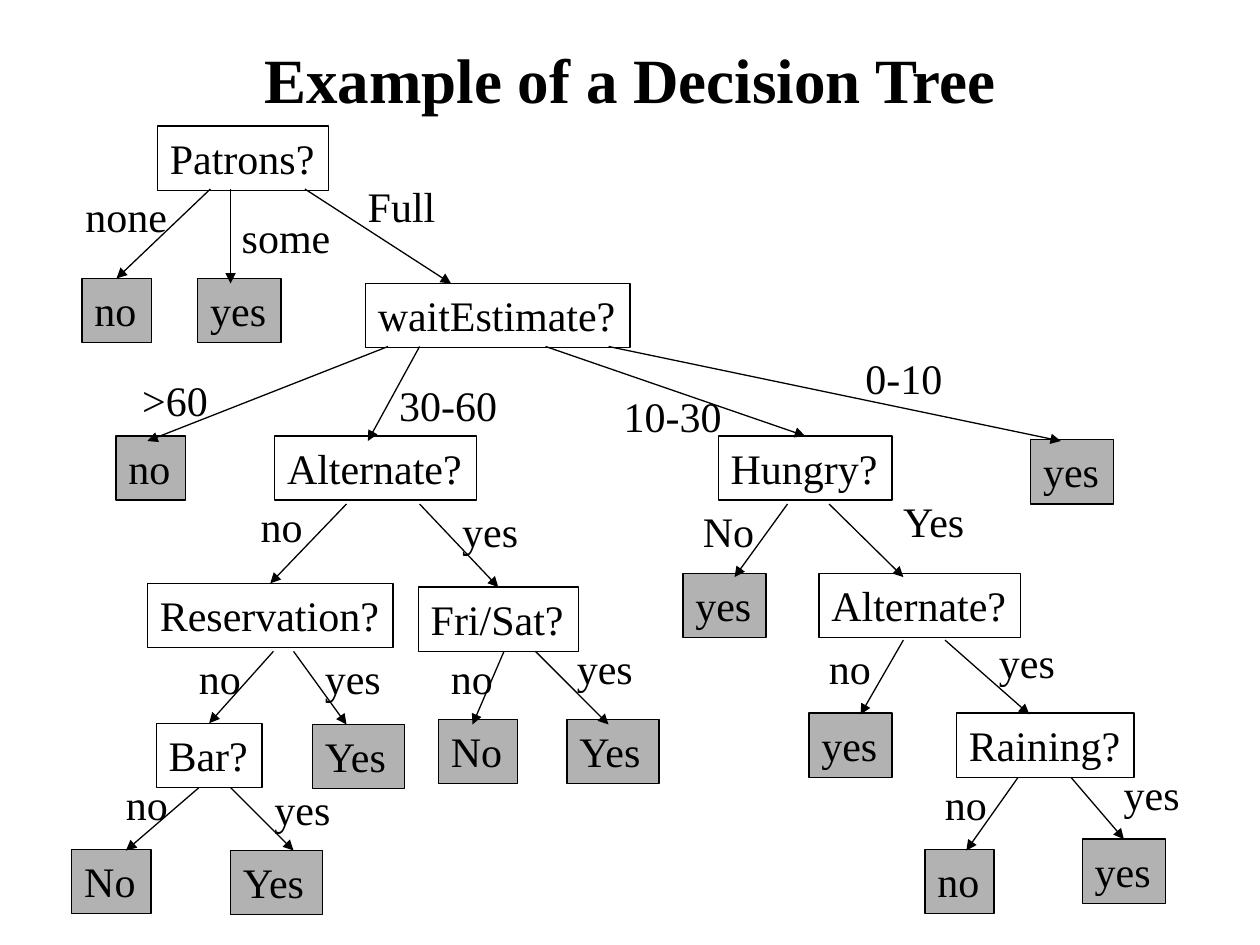
from lxml import etree
from pptx import Presentation
from pptx.dml.color import RGBColor
from pptx.enum.shapes import MSO_CONNECTOR, MSO_SHAPE
from pptx.enum.text import MSO_ANCHOR, MSO_AUTO_SIZE, PP_ALIGN
from pptx.oxml.ns import qn
from pptx.util import Cm, Pt

RECT = MSO_SHAPE.RECTANGLE
LINE = MSO_CONNECTOR.STRAIGHT
LEFT, MID = PP_ALIGN.LEFT, PP_ALIGN.CENTER
TOP, CENTER = MSO_ANCHOR.TOP, MSO_ANCHOR.MIDDLE
GROW = MSO_AUTO_SIZE.SHAPE_TO_FIT_TEXT

BLACK, GRAY = "000000", "B2B2B2"
FONT = {"name": "Times New Roman", "size": Pt(24), "bold": False}
HEAD = {**FONT, "size": Pt(36), "bold": True}
FRAME = {"word_wrap": False, "auto_size": GROW, "vertical_anchor": TOP}
BANNER = {"word_wrap": True, "vertical_anchor": CENTER}

# Width of each text with its margins, in inches
WIDTH = {
    "no": 0.54, "No": 0.62, "yes": 0.65, "Yes": 0.72, "none": 0.86,
    "some": 0.92, "Full": 0.74, ">60": 0.72, "0-10": 0.82,
    "30-60": 0.99, "10-30": 0.99, "Patrons?": 1.35,
    "waitEstimate?": 2.09, "Alternate?": 1.59, "Hungry?": 1.37,
    "Reservation?": 1.94, "Fri/Sat?": 1.26, "Bar?": 0.83,
    "Raining?": 1.4,
}

# Branches: child, its corner, arrow start, arrow end, label, its corner.
# An arrow without an end joins the middle of the child's top side.
TREE = [
    # Patrons?
    ("no", (0.65, 2.21), (1.67, 1.5), None, "none", (0.58, 1.46)),
    ("yes", (1.57, 2.21), (1.83, 1.5), (1.83, 2.25), "some", (1.82, 1.63)),
    ("waitEstimate?", (2.9, 2.25), (2.42, 1.5), (3.58, 2.25), "Full", (2.82, 1.38)),
    # waitEstimate?
    ("no", (0.92, 3.46), (3.08, 2.75), (1.17, 3.5), ">60", (1.03, 2.92)),
    ("Alternate?", (2.18, 3.46), (3.33, 2.75), (2.92, 3.5), "30-60", (3.07, 2.96)),
    ("Hungry?", (5.7, 3.46), (4.33, 2.75), None, "10-30", (4.85, 3.05)),
    ("yes", (8.18, 3.49), (4.83, 2.75), (8.42, 3.5), "0-10", (6.77, 2.75)),
    # Alternate? on the left
    ("Reservation?", (1.17, 4.63), (2.75, 4), None, "no", (1.97, 3.92)),
    ("Fri/Sat?", (3.32, 4.66), (3.33, 4), None, "yes", (3.57, 3.96)),
    # Reservation?
    ("Bar?", (1.24, 5.74), (2.17, 5.17), None, "no", (1.48, 5.13)),
    ("Yes", (2.48, 5.75), (2.33, 5.17), (2.75, 5.75), "yes", (2.48, 5.13)),
    # Bar?
    ("No", (0.57, 6.74), (1.58, 6.25), (1, 6.75), "no", (0.9, 6.13)),
    ("Yes", (1.83, 6.75), (1.83, 6.25), (2.33, 6.75), "yes", (2.08, 6.17)),
    # Fri/Sat?
    ("No", (3.48, 5.71), (4, 5.17), (3.75, 5.75), "no", (3.48, 5.13)),
    ("Yes", (4.5, 5.71), (4.25, 5.17), (4.83, 5.75), "yes", (4.48, 5.05)),
    # Hungry?
    ("yes", (5.42, 4.55), (6.25, 4), (5.83, 4.58), "No", (5.48, 3.96)),
    ("Alternate?", (6.5, 4.55), (6.58, 4), (7.17, 4.58), "Yes", (7.07, 3.88)),
    # Alternate? on the right
    ("yes", (6.42, 5.66), (7.17, 5.08), (6.83, 5.67), "no", (6.48, 5.05)),
    ("Raining?", (7.59, 5.66), (7.5, 5.08), (8.17, 5.67), "yes", (7.83, 5)),
    # Raining?
    ("no", (7.34, 6.74), (8.08, 6.17), (7.67, 6.75), "no", (7.4, 6.13)),
    ("yes", (8.59, 6.66), (8.5, 6.17), None, "yes", (8.82, 6.05)),
]


def cm(*vals):
    """Turn inches into Cm lengths."""
    return [Cm(2.54 * val) for val in vals]


def paint(part, tone):
    part.rgb = RGBColor.from_string(tone)


def apply(obj, form):
    for key, val in form.items():
        setattr(obj, key, val)


def write(shape, text, font=FONT, frame=FRAME, align=LEFT):
    body = shape.text_frame
    body.text = text
    apply(body, frame)
    para = body.paragraphs[0]
    para.alignment = align
    run = para.runs[0]
    apply(run.font, font)
    paint(run.font.color, BLACK)


def add_node(slide, text, spot):
    """Draw a question as an open box, an answer as a gray one."""
    box = slide.shapes.add_shape(RECT, *cm(*spot, WIDTH[text] + 0.01, 0.51))
    box.shadow.inherit = False
    if text.endswith("?"):
        box.fill.background()
    else:
        box.fill.solid()
        paint(box.fill.fore_color, GRAY)
    paint(box.line.color, BLACK)
    box.line.width = Pt(0.75)
    write(box, text)
    return box


def add_label(slide, text, spot):
    write(slide.shapes.add_textbox(*cm(*spot, WIDTH[text], 0.5)), text)


def add_arrow(slide, start, end, child):
    link = slide.shapes.add_connector(LINE, *cm(*start, *(end or start)))
    if end is None:
        link.end_connect(child, 0)
    paint(link.line.color, BLACK)
    link.line.width = Pt(0.75)
    props = link._element.spPr
    tip = etree.SubElement(props.find(qn("a:ln")), qn("a:tailEnd"))
    tip.set("type", "triangle")
    etree.SubElement(props, qn("a:effectLst"))


def add_title(slide, text):
    box = slide.shapes.add_textbox(*cm(0.75, 0, 8.5, 1.25))
    write(box, text, HEAD, BANNER, MID)


def main():
    deck = Presentation()
    deck.slide_width, deck.slide_height = cm(10, 7.5)
    slide = deck.slides.add_slide(deck.slide_layouts[6])

    add_title(slide, "Example of a Decision Tree")

    # Root, then each branch with its child
    add_node(slide, "Patrons?", (1.25, 1))
    for text, spot, start, end, label, place in TREE:
        child = add_node(slide, text, spot)
        add_arrow(slide, start, end, child)
        add_label(slide, label, place)

    deck.save("out.pptx")


if __name__ == "__main__":
    main()
